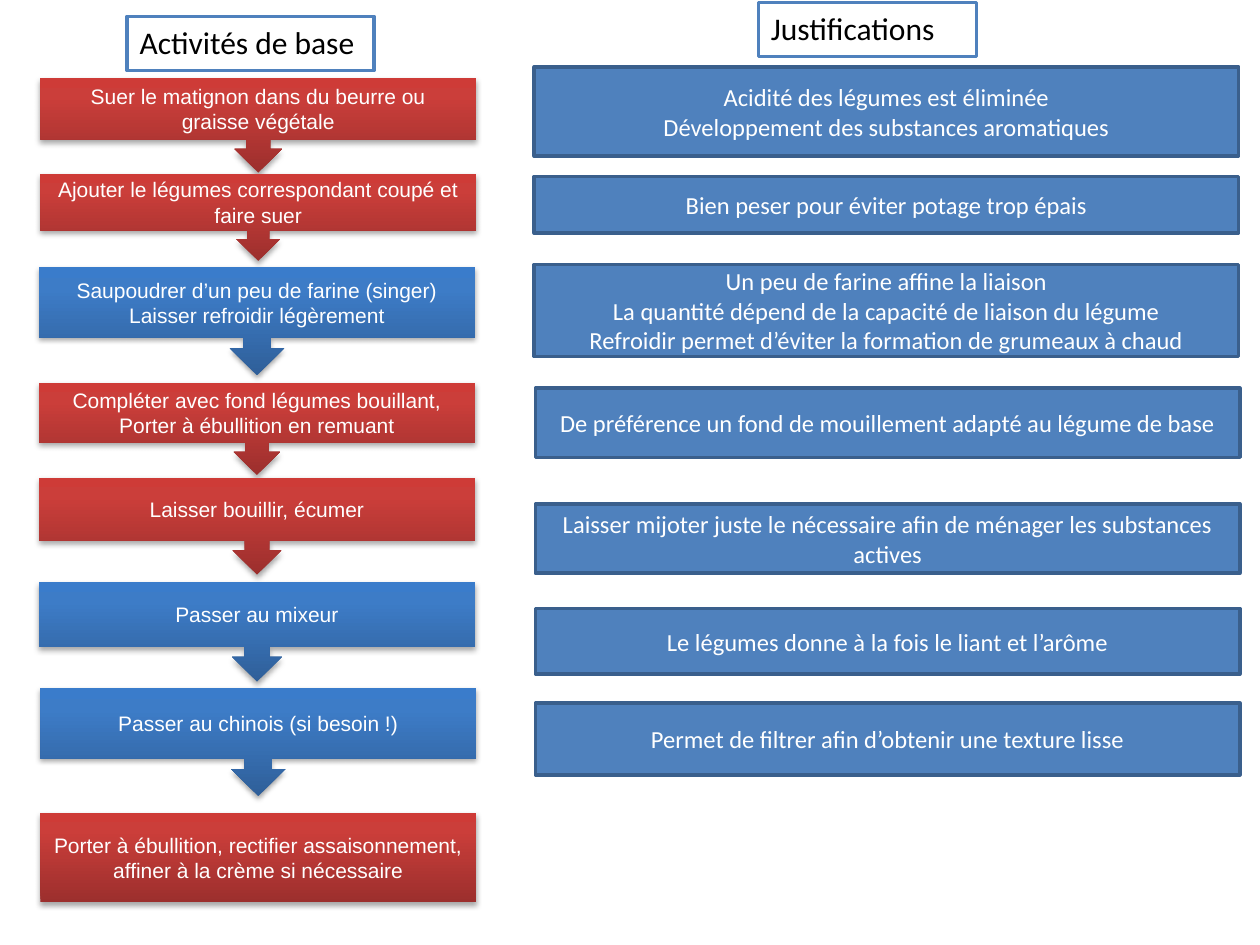
from lxml import etree
from pptx import Presentation
from pptx.dml.color import RGBColor
from pptx.enum.shapes import MSO_SHAPE
from pptx.enum.text import MSO_ANCHOR, MSO_AUTO_SIZE, PP_ALIGN
from pptx.oxml.ns import qn
from pptx.util import Inches, Pt

CALLOUT, BOX = MSO_SHAPE.DOWN_ARROW_CALLOUT, MSO_SHAPE.RECTANGLE
CENTER, LEFT = PP_ALIGN.CENTER, PP_ALIGN.LEFT
MIDDLE, TOP = MSO_ANCHOR.MIDDLE, MSO_ANCHOR.TOP
FIT_SHAPE = MSO_AUTO_SIZE.SHAPE_TO_FIT_TEXT

WHITE = RGBColor(0xFF, 0xFF, 0xFF)
BLACK = RGBColor(0x00, 0x00, 0x00)
BLUE = RGBColor(0x4F, 0x81, 0xBD)
DARK_BLUE = RGBColor(0x3A, 0x5F, 0x8C)

RED_STOPS = [(0, "9C2F2D"), (80, "CB3E3A"), (100, "CE3B37")]
BLUE_STOPS = [(0, "2F5F99"), (80, "3D7CC7"), (100, "3A7CCB")]

HEADINGS = [
    ("Activités de base", 1.01, 0.13, 1.96),
    ("Justifications", 6.02, 0.02, 1.73),
]
HEADING_HEIGHT = 0.43

STEP_WIDTH = 3.46
STEPS = [
    (0.32, 0.62, 0.75, RED_STOPS, ["Suer le matignon dans du beurre ou", "graisse végétale"]),
    (0.32, 1.38, 0.69, RED_STOPS, ["Ajouter le légumes correspondant coupé et faire suer"]),
    (0.31, 2.12, 0.86, BLUE_STOPS, ["Saupoudrer d’un peu de farine (singer)", "Laisser refroidir légèrement"]),
    (0.31, 3.04, 0.73, RED_STOPS, ["Compléter avec fond légumes bouillant,", "Porter à ébullition en remuant"]),
    (0.31, 3.79, 0.77, RED_STOPS, ["Laisser bouillir, écumer"]),
    (0.31, 4.62, 0.79, BLUE_STOPS, ["Passer au mixeur"]),
    (0.32, 5.46, 0.86, BLUE_STOPS, ["Passer au chinois (si besoin !)"]),
    (0.32, 6.45, 0.71, RED_STOPS, ["Porter à ébullition, rectifier assaisonnement, affiner à la crème si nécessaire"]),
]

REASON_WIDTH = 5.59
REASONS = [
    (4.24, 0.53, 0.71, ["Acidité des légumes est éliminée", "Développement des substances aromatiques"]),
    (4.24, 1.40, 0.45, ["Bien peser pour éviter potage trop épais"]),
    (4.24, 2.10, 0.73, [
        "Un peu de farine affine la liaison",
        "La quantité dépend de la capacité de liaison du légume",
        "Refroidir permet d’éviter la formation de grumeaux à chaud",
    ]),
    (4.25, 3.08, 0.55, ["De préférence un fond de mouillement adapté au légume de base"]),
    (4.25, 4.00, 0.55, ["Laisser mijoter juste le nécessaire afin de ménager les substances actives"]),
    (4.25, 4.83, 0.52, ["Le légumes donne à la fois le liant et l’arôme"]),
    (4.25, 5.58, 0.57, ["Permet de filtrer afin d’obtenir une texture lisse"]),
]


def add_box(slide, preset, left, top, width, height, lines, font, size, color,
            align=CENTER, anchor=MIDDLE):
    shape = slide.shapes.add_shape(preset, *map(Inches, (left, top, width, height)))
    shape.shadow.inherit = False
    frame = shape.text_frame
    frame.word_wrap = True
    frame.vertical_anchor = anchor
    for index, line in enumerate(lines):
        paragraph = frame.add_paragraph() if index else frame.paragraphs[0]
        paragraph.alignment = align
        run = paragraph.add_run()
        run.text = line
        run.font.name = font
        run.font.size = Pt(size)
        run.font.color.rgb = color
    return shape


def paint_flat(shape, fill, outline):
    shape.fill.solid()
    shape.fill.fore_color.rgb = fill
    shape.line.color.rgb = outline
    shape.line.width = Pt(2)


def add_color(parent, value):
    return etree.SubElement(parent, qn("a:srgbClr"), val=value)


def paint_raised(shape, stops):
    shape.line.fill.background()
    shape.fill.gradient()
    shape.fill.gradient_angle = 90
    properties = shape._element.spPr
    stop_list = properties.find(".//" + qn("a:gsLst"))
    for stop in list(stop_list):
        stop_list.remove(stop)
    for percent, value in stops:
        add_color(etree.SubElement(stop_list, qn("a:gs"), pos=str(percent * 1000)), value)
    shadow = etree.SubElement(
        properties.find(qn("a:effectLst")), qn("a:outerShdw"),
        blurRad=str(Pt(3.1)), dist=str(Pt(1.8)), dir="5400000", rotWithShape="0")
    etree.SubElement(add_color(shadow, "000000"), qn("a:alpha"), val="35000")


def main():
    deck = Presentation()
    deck.slide_width, deck.slide_height = Inches(10), Inches(7.5)
    slide = deck.slides.add_slide(deck.slide_layouts.get_by_name("Blank"))

    for index, (left, top, height, stops, lines) in enumerate(STEPS, start=1):
        preset = CALLOUT if index < len(STEPS) else BOX
        step = add_box(slide, preset, left, top, STEP_WIDTH, height, lines, "Arial", 12, WHITE)
        paint_raised(step, stops)

    for label, left, top, width in HEADINGS:
        heading = add_box(slide, BOX, left, top, width, HEADING_HEIGHT, [label],
                          "Calibri", 18, BLACK, LEFT, TOP)
        heading.text_frame.auto_size = FIT_SHAPE
        paint_flat(heading, WHITE, BLUE)

    for left, top, height, lines in REASONS:
        reason = add_box(slide, BOX, left, top, REASON_WIDTH, height, lines, "Calibri", 14, WHITE)
        paint_flat(reason, BLUE, DARK_BLUE)

    deck.save("out.pptx")


if __name__ == "__main__":
    main()
